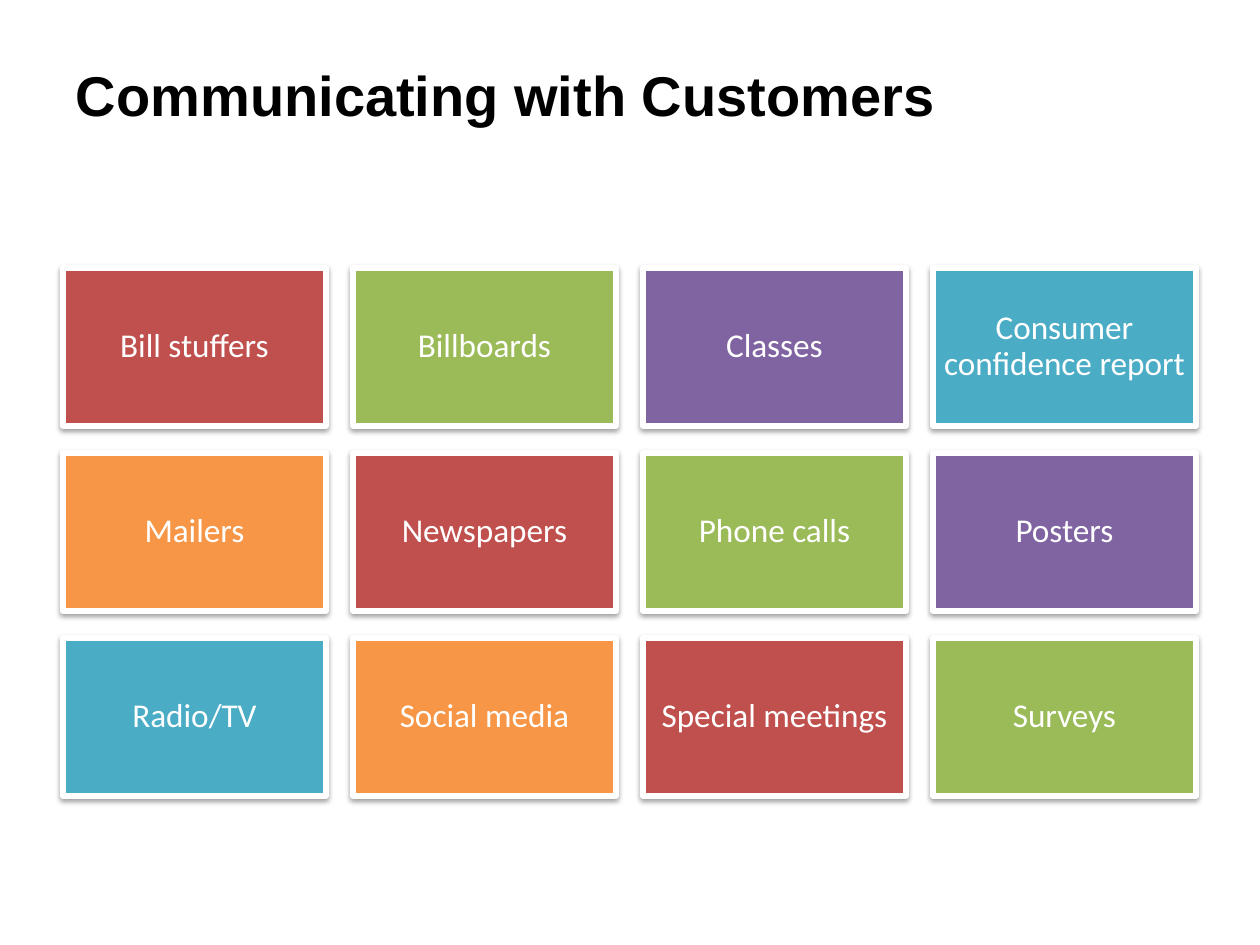
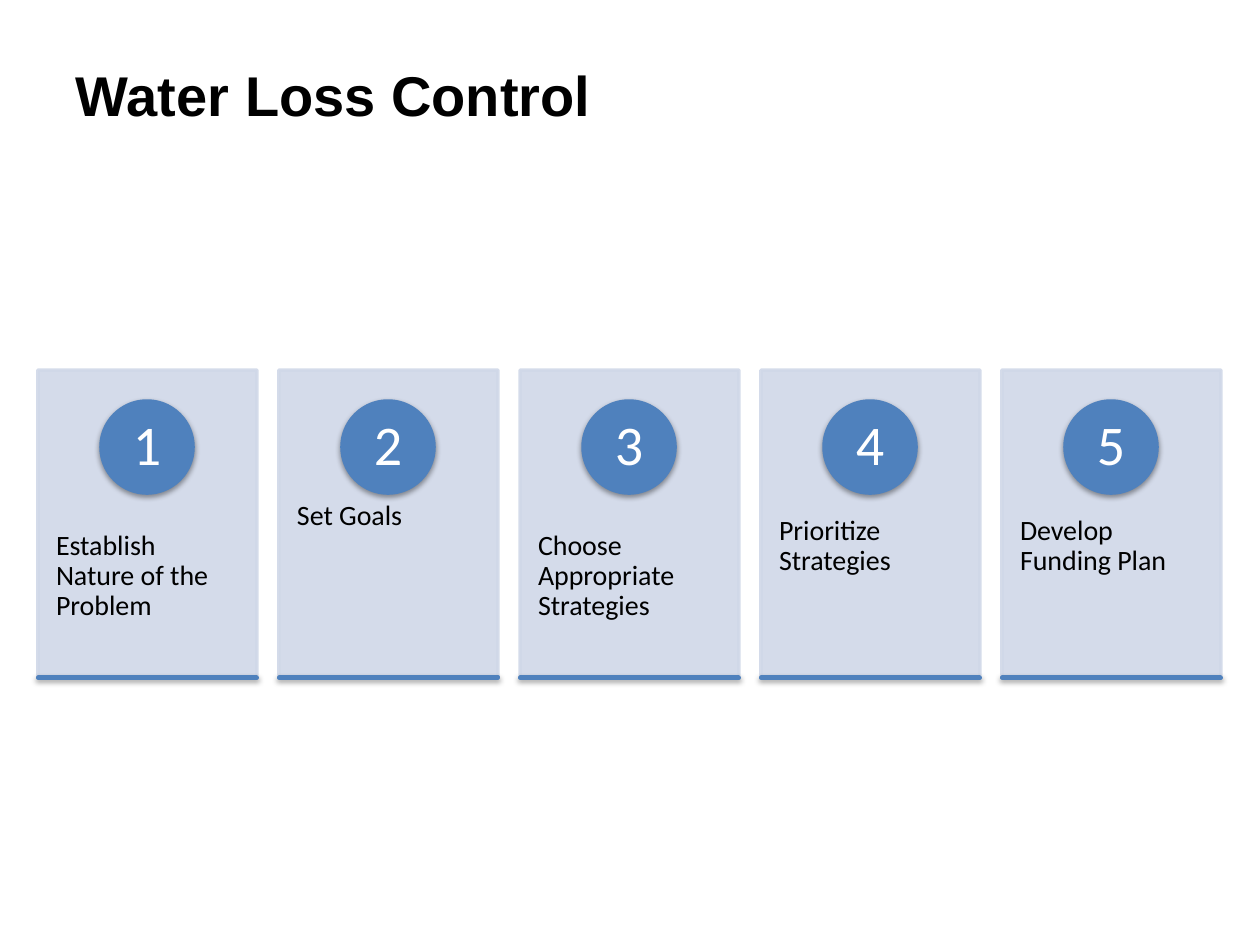
from lxml import etree
from pptx import Presentation
from pptx.dml.color import RGBColor
from pptx.enum.shapes import MSO_SHAPE
from pptx.enum.text import MSO_ANCHOR, PP_ALIGN
from pptx.oxml.ns import qn
from pptx.util import Pt

RECT, OVAL = MSO_SHAPE.RECTANGLE, MSO_SHAPE.OVAL
TOP, MIDDLE = MSO_ANCHOR.TOP, MSO_ANCHOR.MIDDLE
LEFT, CENTER = PP_ALIGN.LEFT, PP_ALIGN.CENTER
SCALE = 914400 / 126
COLORS = {
    "white": "FFFFFF", "black": "000000", "red": "C0504D",
    "green": "9BBB59", "purple": "8064A2", "teal": "4BACC6",
    "orange": "F79646", "blue": "4F81BD", "pale": "D0D8E8",
}
CYCLE = ["red", "green", "purple", "teal", "orange"]
MEDIA = [
    "Bill stuffers", "Billboards", "Classes", "Consumer confidence report",
    "Mailers", "Newspapers", "Phone calls", "Posters",
    "Radio/TV", "Social media", "Special meetings", "Surveys",
]
STEPS = [
    "Establish Nature of the Problem", "Set Goals",
    "Choose Appropriate Strategies", "Prioritize Strategies",
    "Develop Funding Plan",
]


def px(*vals):
    return [round(v * SCALE) for v in vals]


def color(name):
    return RGBColor.from_string(COLORS[name])


def child(node, tag, **attrs):
    return etree.SubElement(node, qn(tag), attrs)


def cast(shape):
    effects = shape._element.spPr.find(qn("a:effectLst"))
    shade = child(effects, "a:outerShdw", blurRad=str(Pt(3.1)),
                  dist=str(Pt(1.6)), dir="5400000", rotWithShape="0")
    tint = child(shade, "a:srgbClr", val=COLORS["black"])
    child(tint, "a:alpha", val="38000")


def fade(shape):
    for tint in shape._element.spPr.iter(qn("a:srgbClr")):
        child(tint, "a:alpha", val="90000")


def draw(slide, kind, box, fill, line, width=2, shadow=True):
    shape = slide.shapes.add_shape(kind, *px(*box))
    shape.shadow.inherit = False
    shape.fill.solid()
    shape.fill.fore_color.rgb = color(fill)
    shape.line.color.rgb = color(line)
    shape.line.width = Pt(width)
    if shadow:
        cast(shape)
    return shape


def write(shape, text, size, ink, pad, align=CENTER, anchor=MIDDLE,
          face="Calibri", bold=False, space=0.9):
    frame = shape.text_frame
    frame.word_wrap = True
    frame.vertical_anchor = anchor
    side, edge = px(*pad)
    frame.margin_left = frame.margin_right = side
    frame.margin_top = frame.margin_bottom = edge
    frame.text = text
    par = frame.paragraphs[0]
    par.alignment = align
    par.line_spacing = space
    par.font.name = face
    par.font.size = Pt(size)
    par.font.bold = bold
    par.font.color.rgb = color(ink)


def start(deck, text):
    slide = deck.slides.add_slide(deck.slide_layouts[5])
    title = slide.shapes.title
    title.left, title.top, title.width, title.height = px(63, 15, 1134, 158)
    write(title, text, 32, "black", (13, 6), LEFT, face="Arial", bold=True,
          space=1.0)
    return slide


def tiles(slide, box, cols=4, gap=27):
    left, top, width, height = box
    rows = len(MEDIA) // cols
    wide = (width - gap * (cols - 1)) // cols
    high = (height - gap * (rows - 1)) // rows
    for i, name in enumerate(MEDIA):
        row, col = divmod(i, cols)
        place = (left + col * (wide + gap), top + row * (high + gap), wide, high)
        tile = draw(slide, RECT, place, CYCLE[i % len(CYCLE)], "white", 3)
        write(tile, name, 19, "white", (10, 10))


def card(slide, box, num, text):
    left, top, width, height = box
    back = draw(slide, RECT, box, "pale", "pale", shadow=False)
    fade(back)
    label = slide.shapes.add_textbox(*px(left, top + 116, width, 184))
    write(label, text, 16, "black", (18, 45), LEFT, TOP)
    size = 92
    disc = (left + (width - size) // 2, top + 31, size, size)
    badge = draw(slide, OVAL, disc, "blue", "blue")
    write(badge, str(num), 32, "white", (0, 0))
    draw(slide, RECT, (left, top + height, width, 1), "blue", "blue")


def cards(slide, box, gap=22):
    left, top, width, height = box
    count = len(STEPS)
    wide = (width - gap * (count - 1)) // count
    for i, text in enumerate(STEPS):
        card(slide, (left + i * (wide + gap), top, wide, height), i + 1, text)


def main():
    deck = Presentation()
    deck.slide_width, deck.slide_height = px(1260, 945)
    tiles(start(deck, "Communicating with Customers"), (63, 268, 1133, 528))
    cards(start(deck, "Water Loss Control"), (38, 370, 1183, 307))
    deck.save("out.pptx")


if __name__ == "__main__":
    main()
